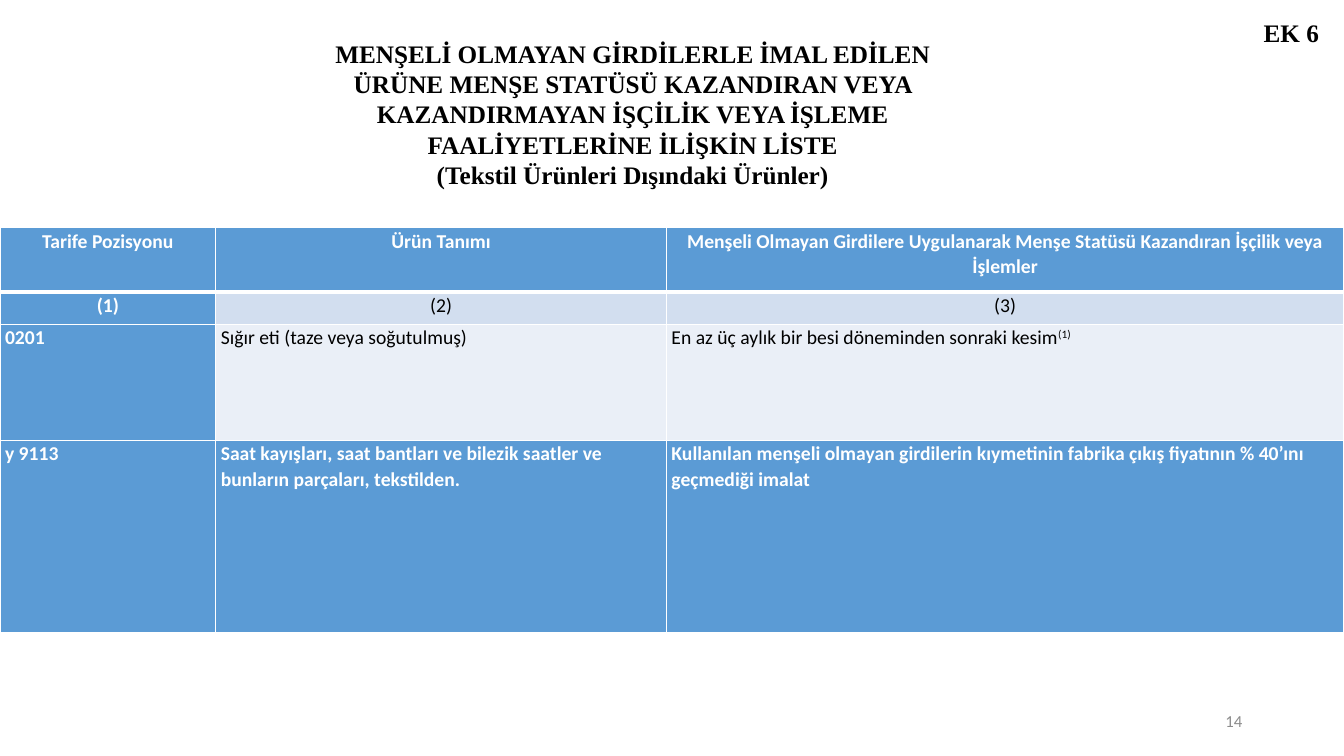
import pptx
import pptx.util
import pptx.dml.color
import pptx.enum.text
import pptx.oxml.ns
import lxml.etree

PX = 9144
BLUE, PALE, LIGHT = "5B9BD5", "D2DEEF", "EAEFF7"
WHITE, BLACK, GREY = "FFFFFF", "000000", "8C8C8C"
SERIF = "Times New Roman"
ALIGN = pptx.enum.text.PP_ALIGN
ANCHOR = pptx.enum.text.MSO_ANCHOR
AUTO = pptx.enum.text.MSO_AUTO_SIZE
COLS = [214, 447, 672]


def px(n):
    return pptx.util.Emu(n * PX)


def rgb(color):
    return pptx.dml.color.RGBColor.from_string(color)


def add_run(p, text, size=14, font="Calibri", color=BLACK, bold=False, baseline=0):
    r = p.add_run()
    r.text = text
    r.font.size = pptx.util.Pt(size)
    r.font.name = font
    r.font.bold = bold
    r.font.color.rgb = rgb(color)
    if baseline:
        r._r.get_or_add_rPr().set("baseline", str(baseline * 1000))


def add_label(s, box, lines, align, anchor=ANCHOR.TOP, wrap=True, grow=True, **fmt):
    tf = s.shapes.add_textbox(*map(px, box)).text_frame
    tf.word_wrap = wrap
    tf.auto_size = AUTO.SHAPE_TO_FIT_TEXT if grow else AUTO.NONE
    tf.vertical_anchor = anchor
    for i, line in enumerate(lines):
        p = tf.add_paragraph() if i else tf.paragraphs[0]
        p.alignment = align
        add_run(p, line, **fmt)


def set_borders(cell, bottom):
    tc_pr = cell._tc.get_or_add_tcPr()
    qn = pptx.oxml.ns.qn
    for side, width in (("L", 1), ("R", 1), ("T", 1), ("B", bottom)):
        ln = lxml.etree.SubElement(tc_pr, qn(f"a:ln{side}"), w=str(width * 12700))
        fill = lxml.etree.SubElement(ln, qn("a:solidFill"))
        lxml.etree.SubElement(fill, qn("a:srgbClr"), val=WHITE)


def fill_cell(cell, text, fill, align, bottom, note=""):
    cell.margin_left = cell.margin_right = px(5)
    cell.margin_top = cell.margin_bottom = 0
    set_borders(cell, bottom)
    cell.fill.solid()
    cell.fill.fore_color.rgb = rgb(fill)
    p = cell.text_frame.paragraphs[0]
    p.alignment = align
    p.line_spacing = 1.07
    strong = fill == BLUE
    color = WHITE if strong else BLACK
    add_run(p, text, color=color, bold=strong)
    if note:
        add_run(p, note, color=color, baseline=30)


def add_rows(s, left, top, rows):
    height = sum(row[0] for row in rows)
    shape = s.shapes.add_table(len(rows), len(COLS), px(left), px(top), px(sum(COLS)), px(height))
    table = shape.table
    table.first_row = table.horz_banding = False
    for column, width in zip(table.columns, COLS):
        column.width = px(width)
    for i, (row_height, fill, align, bottom, texts) in enumerate(rows):
        table.rows[i].height = px(row_height)
        for j, text in enumerate(texts):
            text, note = text if isinstance(text, tuple) else (text, "")
            fill_cell(table.cell(i, j), text, fill if j else BLUE, align, bottom, note)


def add_heading(s, left, top, width, height):
    add_label(s, (left, top, width, height), [
        "MENŞELİ OLMAYAN GİRDİLERLE İMAL EDİLEN ÜRÜNE MENŞE STATÜSÜ KAZANDIRAN VEYA "
        "KAZANDIRMAYAN İŞÇİLİK VEYA İŞLEME FAALİYETLERİNE İLİŞKİN LİSTE",
        "(Tekstil Ürünleri Dışındaki Ürünler)",
    ], ALIGN.CENTER, size=18, font=SERIF, bold=True)


def add_origin_tables(s, left, top):
    add_rows(s, left, top, [
        (64, BLUE, ALIGN.CENTER, 3, [
            "Tarife Pozisyonu",
            "Ürün Tanımı",
            "Menşeli Olmayan Girdilere Uygulanarak Menşe Statüsü Kazandıran İşçilik veya İşlemler",
        ]),
        (32, PALE, ALIGN.CENTER, 1, ["(1)", "(2)", "(3)"]),
        (119, LIGHT, ALIGN.LEFT, 1, [
            "0201",
            "Sığır eti (taze veya soğutulmuş)",
            ("En az üç aylık bir besi döneminden sonraki kesim", "(1)"),
        ]),
    ])
    add_rows(s, left, top + 211, [
        (192, BLUE, ALIGN.LEFT, 3, [
            "y 9113",
            "Saat kayışları, saat bantları ve bilezik saatler ve bunların parçaları, tekstilden.",
            "Kullanılan menşeli olmayan girdilerin kıymetinin fabrika çıkış fiyatının % 40’ını "
            "geçmediği imalat",
        ]),
    ])


def main():
    prs = pptx.Presentation()
    prs.slide_width, prs.slide_height = px(1333), px(750)
    s = prs.slides.add_slide(prs.slide_layouts[6])
    add_label(s, (942, 695, 300, 40), ["14"], ALIGN.RIGHT, anchor=ANCHOR.MIDDLE,
              grow=False, size=12, color=GREY)
    add_label(s, (1242, 12, 76, 40), ["EK 6"], ALIGN.RIGHT, wrap=False,
              size=18, font=SERIF, bold=True)
    add_heading(s, 294, 33, 667, 162)
    add_origin_tables(s, 0, 226)
    prs.save("out.pptx")


if __name__ == "__main__":
    main()
